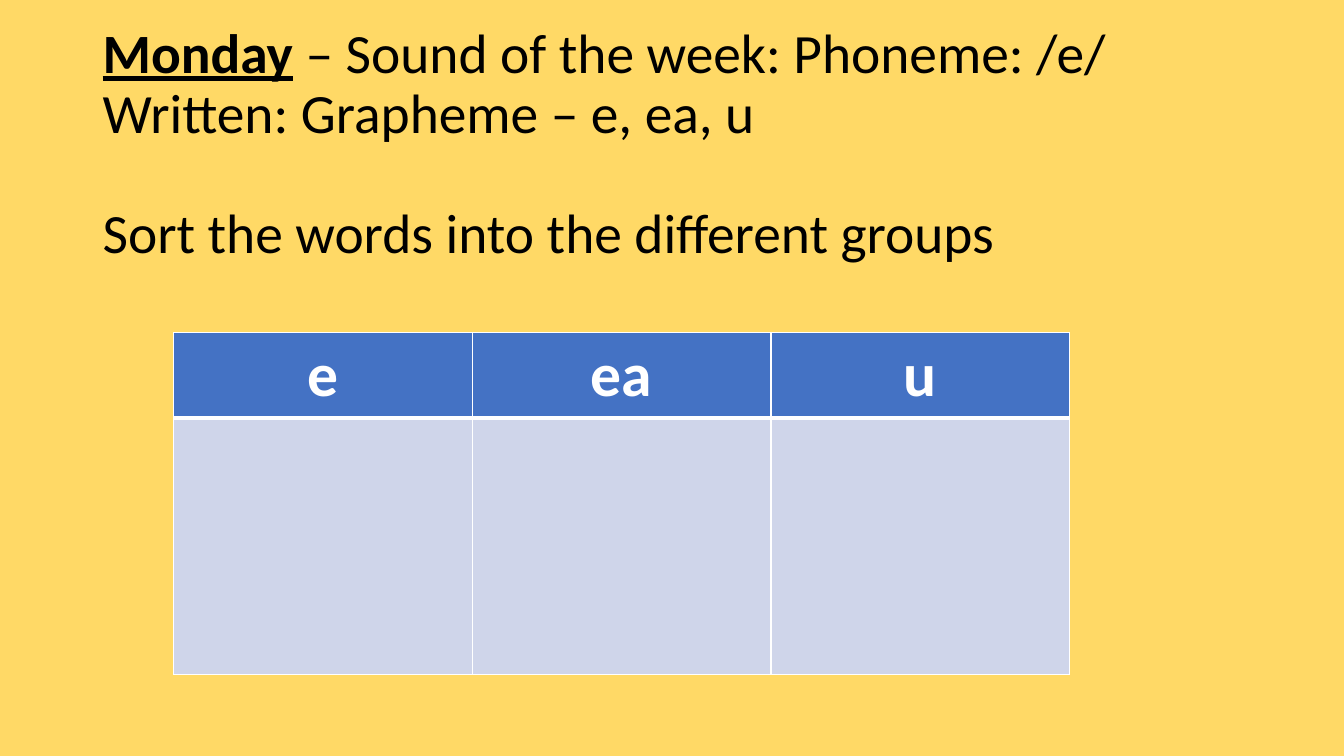
from dataclasses import dataclass

from lxml import etree
from pptx import Presentation
from pptx import util as u
from pptx.dml.color import RGBColor
from pptx.enum import text
from pptx.oxml.ns import qn


@dataclass(frozen=True)
class Theme:
    font: str = "Calibri"
    background: str = "FFD966"
    ink: str = "000000"
    white: str = "FFFFFF"
    header: str = "4472C4"
    body: str = "CFD5EA"
    title_size: float = 39.6
    header_size: float = 44
    thin: float = 1
    thick: float = 3


@dataclass(frozen=True)
class TitleLine:
    label: str
    words: str
    space_before: float = 0


@dataclass(frozen=True)
class TableRow:
    height: float
    fill: str
    top: float
    bottom: float
    words: tuple[str, ...]


THEME = Theme()
TITLE = (
    TitleLine("Monday", " – Sound of the week: Phoneme: /e/"),
    TitleLine("", "Written: Grapheme – e, ea, u"),
    TitleLine("", "Sort the words into the different groups", 43.5),
)
ROWS = (
    TableRow(0.85, THEME.header, THEME.thin, THEME.thick, ("e", "ea", "u")),
    TableRow(2.54, THEME.body, THEME.thick, THEME.thin, ("", "", "")),
)


def style_run(r, size: float, color: str, bold: bool = False) -> None:
    r.font.name = THEME.font
    r.font.size = u.Pt(size)
    r.font.bold = bold
    r.font.color.rgb = RGBColor.from_string(color)


def add_title(s, lines: tuple[TitleLine, ...]) -> None:
    sp = s.shapes.add_textbox(u.Inches(0.92), u.Inches(0.72), u.Inches(11.5), u.Inches(1.45))
    tf = sp.text_frame
    tf.text = "\n".join(line.label or line.words for line in lines)
    tf.word_wrap = True
    tf.vertical_anchor = text.MSO_ANCHOR.MIDDLE
    for p, line in zip(tf.paragraphs, lines):
        p.line_spacing = 0.9
        p.space_before = u.Pt(line.space_before)
        if line.label:
            p.add_run().text = line.words
        for r in p.runs:
            is_label = r.text == line.label
            style_run(r, THEME.title_size, THEME.ink, is_label)
            r.font.underline = is_label


def add_borders(cell, top: float, bottom: float) -> None:
    tc_pr = cell._tc.get_or_add_tcPr()
    widths = {"L": THEME.thin, "R": THEME.thin, "T": top, "B": bottom}
    for side, width in widths.items():
        ln = etree.SubElement(tc_pr, qn(f"a:ln{side}"), w=str(u.Pt(width)))
        fill = etree.SubElement(ln, qn("a:solidFill"))
        etree.SubElement(fill, qn("a:srgbClr"), val=THEME.white)


def add_sorting_table(s, rows: tuple[TableRow, ...]) -> None:
    height = sum(row.height for row in rows)
    tbl = s.shapes.add_table(
        len(rows), len(rows[0].words),
        u.Inches(1.72), u.Inches(3.3), u.Inches(8.89), u.Inches(height),
    ).table
    for tbl_row, row in zip(tbl.rows, rows):
        tbl_row.height = u.Inches(row.height)
        for cell, word in zip(tbl_row.cells, row.words):
            add_borders(cell, row.top, row.bottom)
            cell.fill.solid()
            cell.fill.fore_color.rgb = RGBColor.from_string(row.fill)
            if word:
                p = cell.text_frame.paragraphs[0]
                p.text = word
                p.alignment = text.PP_ALIGN.CENTER
                style_run(p.runs[0], THEME.header_size, THEME.white, bold=True)


def main() -> None:
    prs = Presentation()
    prs.slide_width, prs.slide_height = u.Inches(13.33), u.Inches(7.5)
    s = prs.slides.add_slide(prs.slide_layouts[6])

    # Background
    s.background.fill.solid()
    s.background.fill.fore_color.rgb = RGBColor.from_string(THEME.background)

    # Lesson title and task
    add_title(s, TITLE)

    # Table for sorting words by grapheme
    add_sorting_table(s, ROWS)

    prs.save("out.pptx")


if __name__ == "__main__":
    main()
